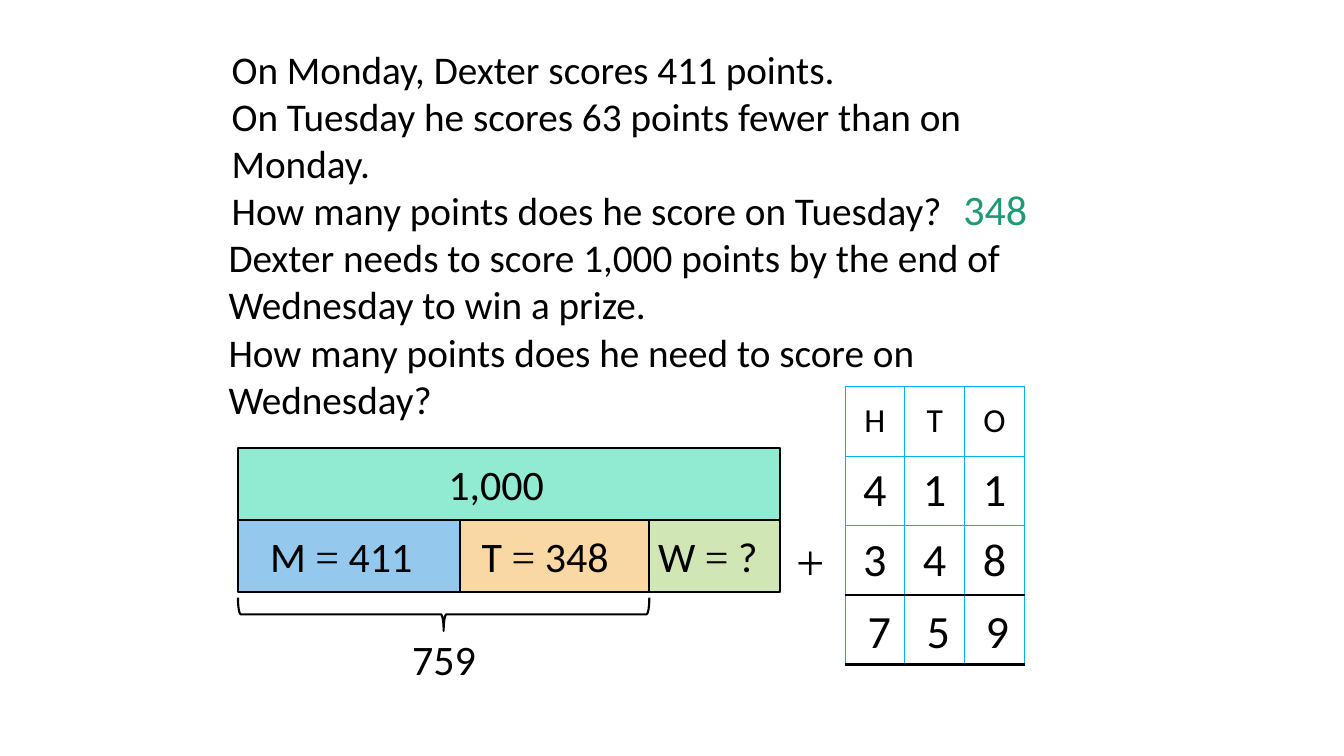
from itertools import accumulate

from lxml.etree import SubElement
from pptx import Presentation
from pptx.dml.color import RGBColor
from pptx.enum.shapes import MSO_SHAPE as SHAPE
from pptx.enum.text import MSO_ANCHOR as ANCHOR, MSO_AUTO_SIZE as AUTO, PP_ALIGN as ALIGN
from pptx.oxml.ns import qn
from pptx.util import Pt

BLACK, WHITE, GREEN, BLUE = "000000", "FFFFFF", "1D9A78", "00B0F0"


def rgb(code):
    return RGBColor.from_string(code)


class Board:
    """The current slide and its style."""
    font, symbol_font = "Calibri", "Times New Roman"
    thin, medium, thick = 0.75, 1.5, 2.25

    def __init__(self, slide):
        self.s = slide

    def add_runs(self, p, text, size, color=BLACK):
        # Operators take the symbol font, everything else the main font
        for i, part in enumerate(text.replace("+", "|+|").replace("=", "|=|").split("|")):
            if not part:
                continue
            r = p.add_run()
            r.text = part
            style = {"name": self.symbol_font if i % 2 else self.font, "size": Pt(size)}
            for key, value in style.items():
                setattr(r.font, key, value)
            r.font.color.rgb = rgb(color)

    def text(self, box, lines, size, color=BLACK, wrap=True):
        tf = self.s.shapes.add_textbox(*map(Pt, box)).text_frame
        for key, value in {"word_wrap": wrap, "auto_size": AUTO.SHAPE_TO_FIT_TEXT}.items():
            setattr(tf, key, value)
        for i, line in enumerate(lines):
            p = tf.add_paragraph() if i else tf.paragraphs[0]
            self.add_runs(p, line, size, color)

    def shape(self, kind, box, fill=None, rotation=0):
        sp = self.s.shapes.add_shape(kind, *map(Pt, box))
        sp.shadow.inherit = False
        sp.rotation = rotation
        if fill:
            sp.fill.solid()
            sp.fill.fore_color.rgb = rgb(fill)
        else:
            sp.fill.background()
        sp.line.color.rgb = rgb(BLACK)
        sp.line.width = Pt(self.medium)

    def border(self, cell, sides):
        tc_pr = cell._tc.get_or_add_tcPr()
        for i, (side, (color, width)) in enumerate(sides.items()):
            ln = SubElement(tc_pr, qn(f"a:ln{side}"), w=str(Pt(width)))
            SubElement(SubElement(ln, qn("a:solidFill")), qn("a:srgbClr"), val=color)
            tc_pr.insert(i, ln)

    def table(self, left, top, col_w, row_h, rows, sizes, ruled):
        n, m = len(rows), len(rows[0])
        box = (left, top, col_w * m, row_h * n)
        table = self.s.shapes.add_table(n, m, *map(Pt, box)).table
        table.first_row = table.horz_banding = False
        for col in table.columns:
            col.width = Pt(col_w)
        grid, rule = (BLUE, self.thin), (BLACK, self.thick)
        for i, row in enumerate(rows):
            table.rows[i].height = Pt(row_h)
            for j, value in enumerate(row):
                cell = table.cell(i, j)
                for side in ("left", "right", "top", "bottom"):
                    setattr(cell, f"margin_{side}", 0)
                cell.vertical_anchor = ANCHOR.MIDDLE
                cell.fill.solid()
                cell.fill.fore_color.rgb = rgb(WHITE)
                p = cell.text_frame.paragraphs[0]
                p.alignment = ALIGN.CENTER
                self.add_runs(p, value, sizes[i])
                self.border(cell, {"L": grid, "R": grid,
                                   "T": rule if i - 1 in ruled else grid,
                                   "B": rule if i in ruled else grid})


def main():
    prs = Presentation()
    prs.slide_width, prs.slide_height = Pt(960), Pt(540)
    board = Board(prs.slides.add_slide(prs.slide_layouts[6]))

    # Word problem and first answer
    board.text((158.4, 28.8, 590.4, 142.6), [
        "On Monday, Dexter scores 411 points.",
        "On Tuesday he scores 63 points fewer than on Monday.",
        "How many points does he score on Tuesday?"], 28)
    board.text((681.1, 127.4, 77.8, 43.2), ["348"], 30, GREEN)
    board.text((156.2, 163.4, 590.4, 142.6), [
        "Dexter needs to score 1,000 points by the end of Wednesday to win a prize.",
        "How many points does he need to score on Wednesday?"], 28)

    # Bar model: the total above its three parts
    left, top, height, label_w = 170, 319.9, 51.4, 126.7
    widths = [158.4, 135.4, 93.6]
    bars = [(left, top, sum(widths), "91EAD2", "1,000", 313.2)]
    starts = accumulate(widths[:-1], initial=left)
    parts = [("94C8ED", "M = 411", 185.8), ("F9D8A3", "T = 348", 337),
             ("D1E6B5", "W = ?", 463)]
    bars += [(x, top + height, w, *part) for x, w, part in zip(starts, widths, parts)]
    for x, y, w, fill, label, label_x in bars:
        board.shape(SHAPE.RECTANGLE, (x, y, w, height), fill)
        board.text((label_x, y + 4, label_w, 43.2), [label], 30)

    # Column addition
    col_w, row_h = 42.7, 49.6
    board.table(603.6, 276.3, col_w, row_h, ["HTO", "411", "348", ["", "", ""]],
                [24, 33, 33, 33], ruled=(2, 3))
    board.text((561.6, 375.1, 41, 51.1), ["+"], 36, wrap=False)
    for i, digit in enumerate("759"):
        board.text((612.7 + 42.1 * i, 427, 32.4, 46.8), [digit], 33)

    # Brace under Monday and Tuesday, turned to point down
    span, depth = sum(widths[:2]), 23.8
    board.shape(SHAPE.LEFT_BRACE, (left + (span - depth) / 2, 438.8 - span / 2, depth, span),
                rotation=270)
    board.text((287.3, 449.3, 77.8, 43.2), ["759"], 30)

    prs.save("out.pptx")


if __name__ == "__main__":
    main()
